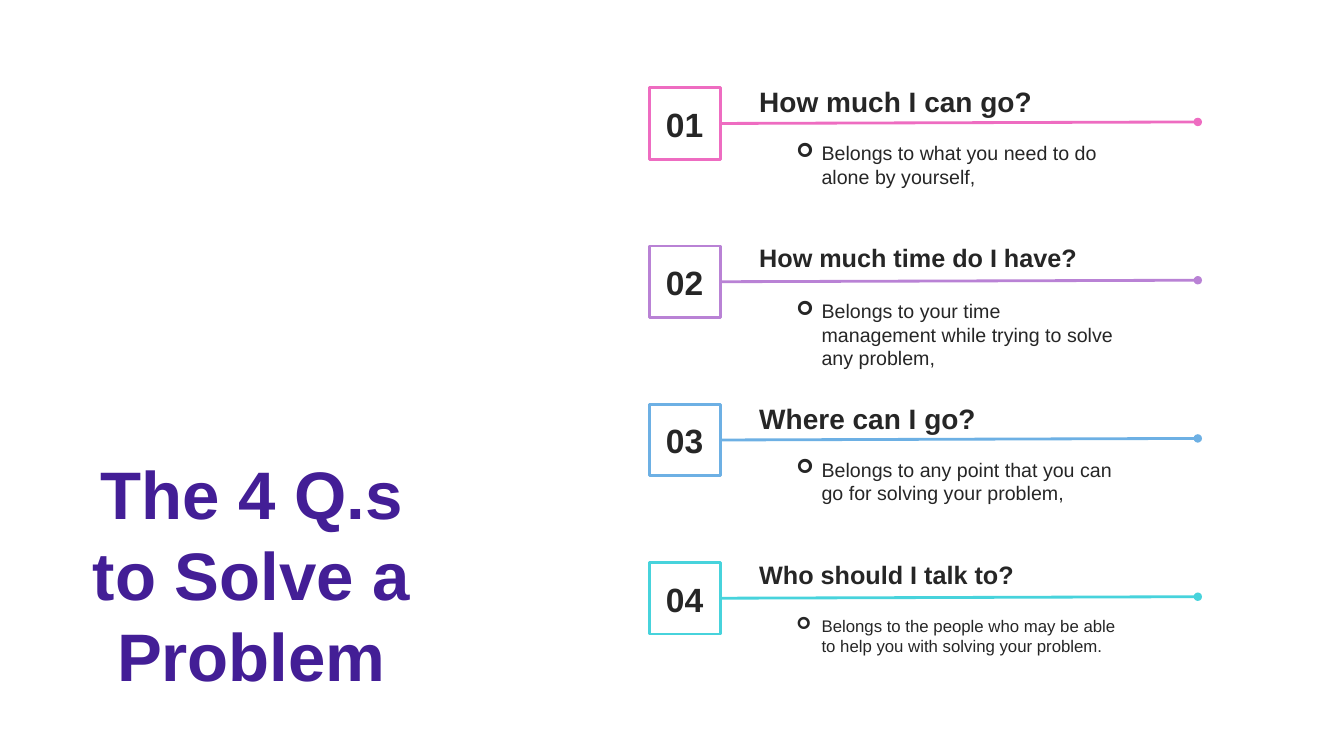
from dataclasses import dataclass

from lxml import etree
from pptx import Presentation
from pptx.dml.color import RGBColor
from pptx.enum.shapes import MSO_CONNECTOR, MSO_SHAPE
from pptx.enum.text import MSO_ANCHOR, MSO_AUTO_SIZE, PP_ALIGN
from pptx.oxml.ns import qn
from pptx.shapes.autoshape import Shape
from pptx.shapes.connector import Connector
from pptx.shapes.shapetree import GroupShapes, SlideShapes
from pptx.slide import Slide
from pptx.util import Inches, Pt

RECTANGLE = MSO_SHAPE.RECTANGLE
STRAIGHT = MSO_CONNECTOR.STRAIGHT
MIDDLE = MSO_ANCHOR.MIDDLE
GROW = MSO_AUTO_SIZE.SHAPE_TO_FIT_TEXT
LEFT, CENTER = PP_ALIGN.LEFT, PP_ALIGN.CENTER
RIGHT_SIDE = 3


@dataclass(frozen=True)
class Theme:
    font: str = "Arial"
    paper: str = "FFFFFF"
    title: str = "431E96"
    ink: str = "262626"
    title_size: int = 48
    number_size: int = 24
    line_width: int = 2


@dataclass(frozen=True)
class Question:
    heading: str
    heading_size: int
    heading_height: float
    answer: str
    answer_size: int
    answer_height: float
    color: str


THEME = Theme()
FIRST_TOP = 0.87
ROW_PITCH = 1.57
SQUARE_LEFT = 6.44
SQUARE_SIDE = 0.71
LINE_END = 11.88

QUESTIONS = (
    Question("How much I can go?", 20, 0.44,
             "Belongs to what you need to do alone by yourself,", 14, 0.57, "EE6CC1"),
    Question("How much time do I have?", 18, 0.4,
             "Belongs to your time management while trying to solve any problem,",
             14, 0.57, "B982D5"),
    Question("Where can I go?", 20, 0.44,
             "Belongs to any point that you can go for solving your problem,",
             14, 0.57, "6DB0E4"),
    Question("Who should I talk to?", 18, 0.4,
             "Belongs to the people who may be able to help you with solving your problem.",
             12, 0.5, "47D3DC"),
)


def write(box: Shape, text: str, size: int, color: str = THEME.ink,
          bold: bool = True, align: PP_ALIGN = LEFT, bullet: str = "") -> None:
    frame = box.text_frame
    frame.word_wrap = True
    frame.auto_size = GROW
    frame.text = text
    para = frame.paragraphs[0]
    para.alignment = align
    if bullet:
        add_bullet(para._p.get_or_add_pPr(), bullet)
    font = para.runs[0].font
    font.name = THEME.font
    font.size = Pt(size)
    font.bold = bold
    font.color.rgb = RGBColor.from_string(color)


def add_bullet(properties: etree._Element, symbol: str) -> None:
    properties.set("marL", str(Inches(0.25)))
    properties.set("indent", str(Inches(-0.25)))
    etree.SubElement(properties, qn("a:buFont"), typeface="Wingdings")
    etree.SubElement(properties, qn("a:buChar"), char=symbol)


def add_text(shapes: SlideShapes | GroupShapes, left: float, top: float,
             width: float, height: float, side_inset: float = 0.12) -> Shape:
    box = shapes.add_textbox(Inches(left), Inches(top), Inches(width), Inches(height))
    box.text_frame.margin_left = box.text_frame.margin_right = Inches(side_inset)
    return box


def add_rectangle(page: Slide, left: float, top: float, width: float, height: float) -> Shape:
    box = page.shapes.add_shape(
        RECTANGLE, Inches(left), Inches(top), Inches(width), Inches(height))
    box.shadow.inherit = False
    box.fill.solid()
    box.fill.fore_color.rgb = RGBColor.from_string(THEME.paper)
    box.line.fill.background()
    return box


def set_line(shape: Shape | Connector, color: str) -> None:
    shape.line.color.rgb = RGBColor.from_string(color)
    shape.line.width = Pt(THEME.line_width)


def add_dotted_end_line(page: Slide, square: Shape, top: float, color: str) -> None:
    """Draw a line from the square's right side to a round dot."""
    line = page.shapes.add_connector(
        STRAIGHT, Inches(SQUARE_LEFT + SQUARE_SIDE), Inches(top + SQUARE_SIDE / 2),
        Inches(LINE_END), Inches(top + 0.34))
    line.begin_connect(square, RIGHT_SIDE)
    set_line(line, color)
    etree.SubElement(line.line._get_or_add_ln(), qn("a:tailEnd"), type="oval")
    etree.SubElement(line._element.spPr, qn("a:effectLst"))


def add_question(page: Slide, index: int, question: Question) -> None:
    top = FIRST_TOP + index * ROW_PITCH
    group = page.shapes.add_group_shape()
    heading = add_text(group.shapes, 7.41, top - 0.08, 3.82, question.heading_height)
    write(heading, question.heading, question.heading_size)
    answer = add_text(group.shapes, 7.8, top + 0.48, 3.41, question.answer_height, 0.1)
    write(answer, question.answer, question.answer_size, bold=False, bullet="➢")

    square = add_rectangle(page, SQUARE_LEFT, top, SQUARE_SIDE, SQUARE_SIDE)
    set_line(square, question.color)
    add_dotted_end_line(page, square, top, question.color)
    number = add_text(page.shapes, 6.48, top + 0.11, 0.62, 0.5)
    write(number, f"{index + 1:02}", THEME.number_size, align=CENTER)


def main() -> None:
    deck = Presentation()
    deck.slide_width, deck.slide_height = Inches(13.33), Inches(7.5)
    page = deck.slides.add_slide(deck.slide_layouts[6])

    title = add_rectangle(page, 0.66, 4.43, 3.67, 2.52)
    write(title, "The 4 Q.s to Solve a Problem", THEME.title_size, THEME.title, align=CENTER)
    title.text_frame.vertical_anchor = MIDDLE

    for index, question in enumerate(QUESTIONS):
        add_question(page, index, question)
    deck.save("out.pptx")


if __name__ == "__main__":
    main()
